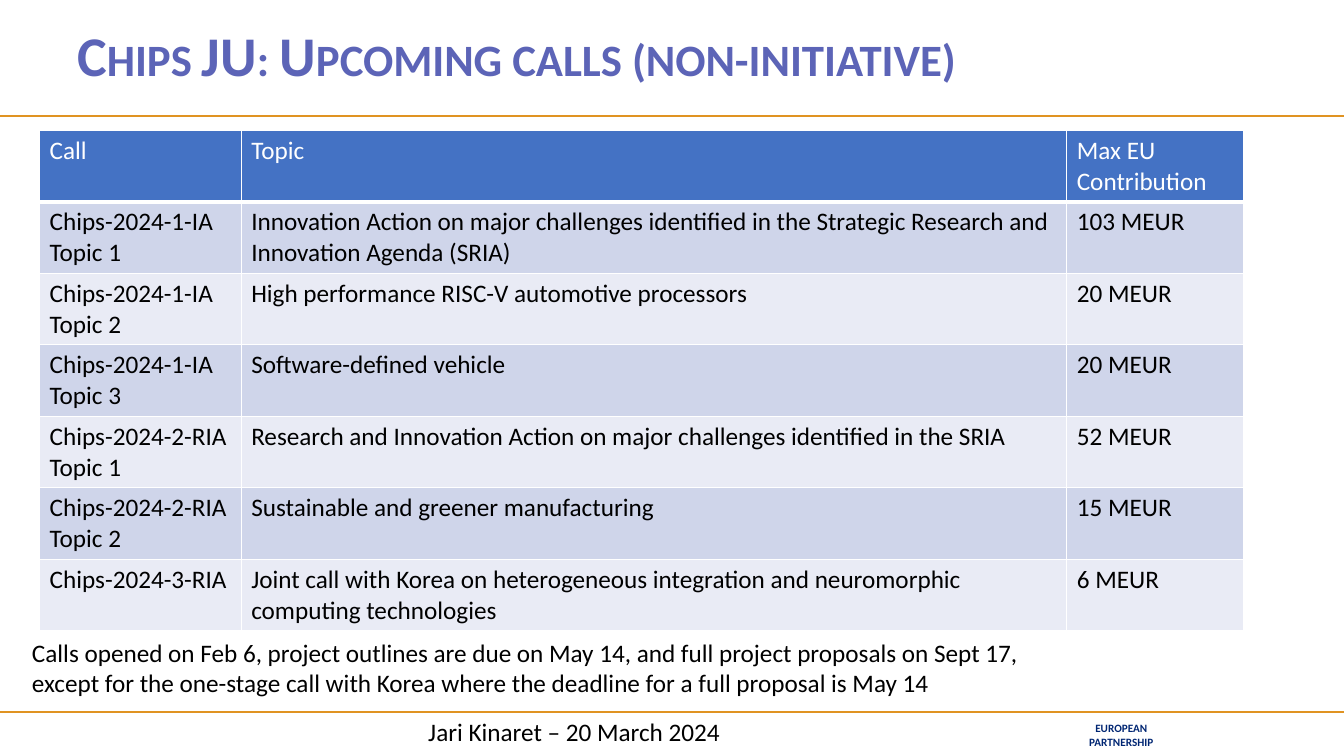
from lxml.etree import SubElement
from pptx import Presentation
from pptx.dml.color import RGBColor
from pptx.enum.shapes import MSO_CONNECTOR as CONN
from pptx.enum.text import MSO_ANCHOR as ANCHOR, PP_ALIGN as ALIGN
from pptx.oxml.ns import qn
from pptx.util import Pt

BLACK, WHITE = "000000", "FFFFFF"
HEADER_FILL, BANDS = "4472C4", ("CFD5EA", "E9EBF5")
COL_WIDTHS = (144, 589.7, 126)
ROW_HEIGHT = 51.1
CALLS = [
    ("Call", "Topic", "Max EU\nContribution"),
    ("Chips-2024-1-IA Topic 1",
     "Innovation Action on major challenges identified in the Strategic "
     "Research and Innovation Agenda (SRIA)", "103 MEUR"),
    ("Chips-2024-1-IA Topic 2",
     "High performance RISC-V automotive processors", "20 MEUR"),
    ("Chips-2024-1-IA Topic 3", "Software-defined vehicle", "20 MEUR"),
    ("Chips-2024-2-RIA Topic 1",
     "Research and Innovation Action on major challenges identified in the SRIA",
     "52 MEUR"),
    ("Chips-2024-2-RIA Topic 2", "Sustainable and greener manufacturing",
     "15 MEUR"),
    ("Chips-2024-3-RIA",
     "Joint call with Korea on heterogeneous integration and neuromorphic "
     "computing technologies", "6 MEUR"),
]


def rgb(value):
    return RGBColor.from_string(value)


def write(tf, text, size=18, color=BLACK, bold=False, align=ALIGN.LEFT,
          spacing=None, small_caps=False):
    """Newline starts a paragraph, vertical tab breaks a line."""
    tf.text = text
    for p in tf.paragraphs:
        p.alignment = align
        if spacing:
            p.line_spacing = spacing
        for r in p.runs:
            r.font.name, r.font.size, r.font.bold = "Calibri", Pt(size), bold
            r.font.color.rgb = rgb(color)
            if small_caps:
                r.font._element.set("cap", "small")


def add_title(s, text):
    sp = s.shapes.title
    sp.left, sp.top, sp.width, sp.height = Pt(48), Pt(0), Pt(864), Pt(82.8)
    sp.text_frame.vertical_anchor = ANCHOR.MIDDLE
    write(sp.text_frame, text, size=40, color="5C64B7", bold=True,
          spacing=0.9, small_caps=True)


def add_text(s, text, x, y, w, h, inset=3.6, **fmt):
    tf = s.shapes.add_textbox(Pt(x), Pt(y), Pt(w), Pt(h)).text_frame
    tf.word_wrap = True
    tf.margin_top = tf.margin_bottom = Pt(inset)
    write(tf, text, **fmt)


def add_rule(s, y, width):
    line = s.shapes.add_connector(CONN.STRAIGHT, 0, Pt(y), width, Pt(y))
    line.line.color.rgb, line.line.width = rgb("E09322"), Pt(1.5)
    SubElement(line._element.spPr, qn("a:effectLst"))


def add_borders(cell, **widths):
    tc_pr = cell._tc.get_or_add_tcPr()
    for side in "LRTB":
        ln = SubElement(tc_pr, qn(f"a:ln{side}"), w=str(Pt(widths.get(side, 1))))
        SubElement(SubElement(ln, qn("a:solidFill")), qn("a:srgbClr"), val=WHITE)


def add_calls_table(s, x, y):
    table = s.shapes.add_table(len(CALLS), len(COL_WIDTHS), Pt(x), Pt(y),
                               Pt(sum(COL_WIDTHS)),
                               Pt(ROW_HEIGHT * len(CALLS))).table
    for col, width in zip(table.columns, COL_WIDTHS):
        col.width = Pt(width)
    for i, row in enumerate(CALLS):
        for j, text in enumerate(row):
            cell = table.cell(i, j)
            # Thick line between the header and the first call
            add_borders(cell, B=3 if i == 0 else 1, T=3 if i == 1 else 1)
            cell.fill.solid()
            cell.fill.fore_color.rgb = rgb(BANDS[(i - 1) % 2] if i else HEADER_FILL)
            write(cell.text_frame, text, color=BLACK if i else WHITE)


def main():
    prs = Presentation()
    prs.slide_width, prs.slide_height = Pt(960), Pt(540)
    s = prs.slides.add_slide(prs.slide_layouts[5])

    # Frame lines and partnership label
    for y in (508.3, 82.8):
        add_rule(s, y, prs.slide_width)
    add_text(s, "EUROPEAN\vPARTNERSHIP", 769, 515.5, 64, 18.7, inset=0,
             size=8, color="002673", bold=True, align=ALIGN.CENTER)

    # Title, footer, table and note
    add_title(s, "Chips JU: Upcoming calls (non-initiative)")
    add_text(s, "Jari Kinaret – 20 March 2024", 298.8, 508.3, 339.8, 20.9)
    add_calls_table(s, 28.3, 93)
    add_text(s, "Calls opened on Feb 6, project outlines are due on May 14, and "
             "full project proposals on Sept 17,\vexcept for the one-stage call "
             "with Korea where the deadline for a full proposal is May 14",
             15.8, 451.4, 897, 51)
    prs.save("out.pptx")


if __name__ == "__main__":
    main()
